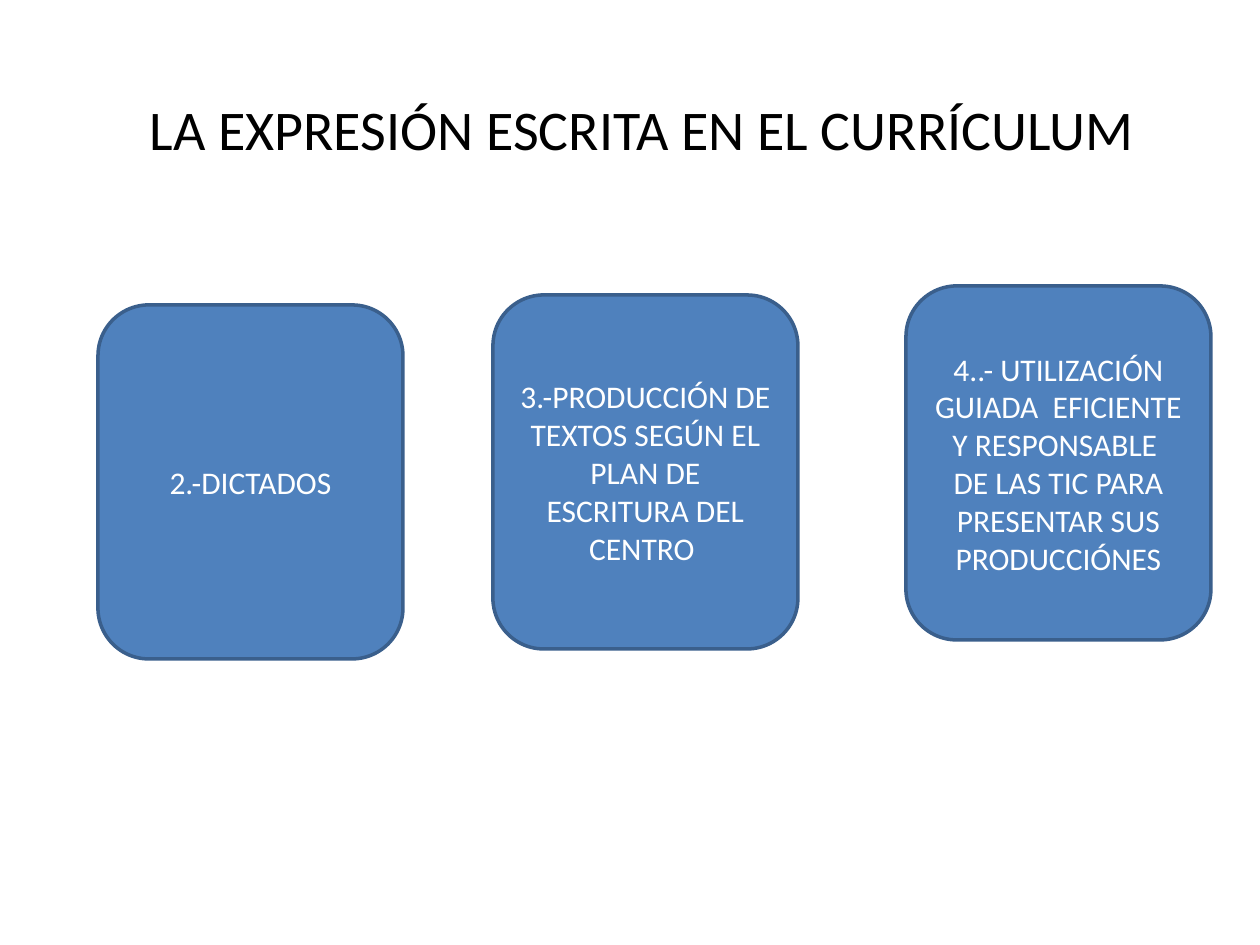
import pptx
import pptx.util
from dataclasses import dataclass
from pptx.dml.color import RGBColor
from pptx.enum.shapes import MSO_SHAPE
from pptx.enum.text import MSO_ANCHOR, PP_ALIGN

PX_PER_INCH = 126


@dataclass(frozen=True)
class Theme:
    font: str = "Calibri"
    title_size: int = 32
    card_size: int = 18
    line_width: int = 2
    title_color: str = "000000"
    card_text: str = "FFFFFF"
    card_fill: str = "4F81BD"
    card_line: str = "3A5F8C"


THEME = Theme()

CARD_WIDTH, CARD_HEIGHT = 305, 354
CARDS = [  # left, top, text
    (98, 305, "2.-DICTADOS"),
    (493, 295, "3.-PRODUCCIÓN DE TEXTOS SEGÚN EL PLAN DE ESCRITURA DEL CENTRO "),
    (906, 286, "4..- UTILIZACIÓN GUIADA  EFICIENTE Y RESPONSABLE  DE LAS TIC "
               "PARA PRESENTAR SUS PRODUCCIÓNES"),
]


def px(n):
    return pptx.util.Emu(round(n * pptx.util.Inches(1) / PX_PER_INCH))


def rgb(color):
    return RGBColor.from_string(color)


def set_text(s, text, size, color, align):
    tf = s.text_frame
    tf.text = text
    tf.word_wrap = True
    tf.vertical_anchor = MSO_ANCHOR.MIDDLE
    p = tf.paragraphs[0]
    p.alignment = align
    font = p.runs[0].font
    font.name = THEME.font
    font.size = pptx.util.Pt(size)
    font.color.rgb = rgb(color)


def add_title(slide, text, left, top, width, height):
    s = slide.shapes.title
    s.left, s.top, s.width, s.height = map(px, (left, top, width, height))
    set_text(s, text, THEME.title_size, THEME.title_color, PP_ALIGN.LEFT)


def add_card(slide, left, top, text):
    s = slide.shapes.add_shape(MSO_SHAPE.ROUNDED_RECTANGLE, px(left), px(top),
                               px(CARD_WIDTH), px(CARD_HEIGHT))
    s.shadow.inherit = False
    s.fill.solid()
    s.fill.fore_color.rgb = rgb(THEME.card_fill)
    s.line.color.rgb = rgb(THEME.card_line)
    s.line.width = pptx.util.Pt(THEME.line_width)
    set_text(s, text, THEME.card_size, THEME.card_text, PP_ALIGN.CENTER)


def main():
    prs = pptx.Presentation()
    prs.slide_width, prs.slide_height = px(1260), px(945)
    slide = prs.slides.add_slide(prs.slide_layouts[5])  # title only

    # Heading
    add_title(slide, "LA EXPRESIÓN ESCRITA EN EL CURRÍCULUM", 137, 88, 1014, 81)

    # Cards, each a little higher than the one before
    for left, top, text in CARDS:
        add_card(slide, left, top, text)

    prs.save("out.pptx")


if __name__ == "__main__":
    main()
